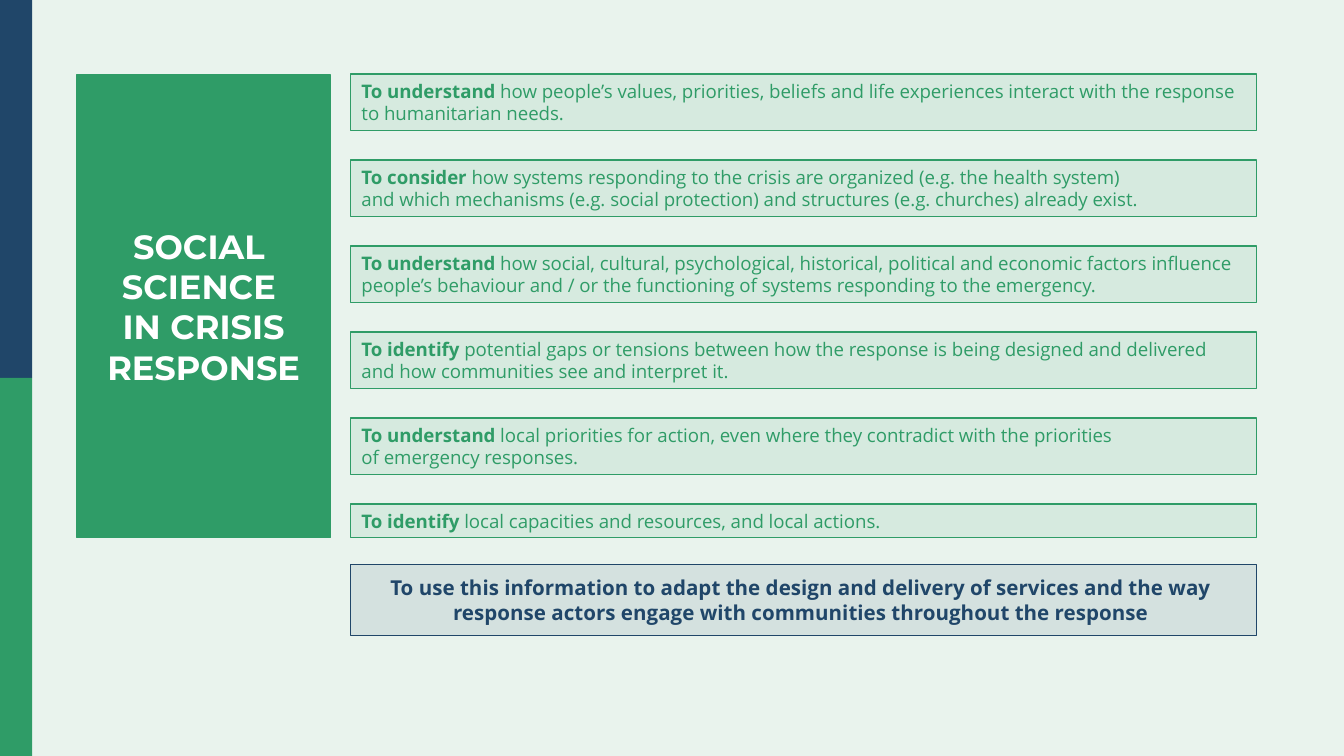
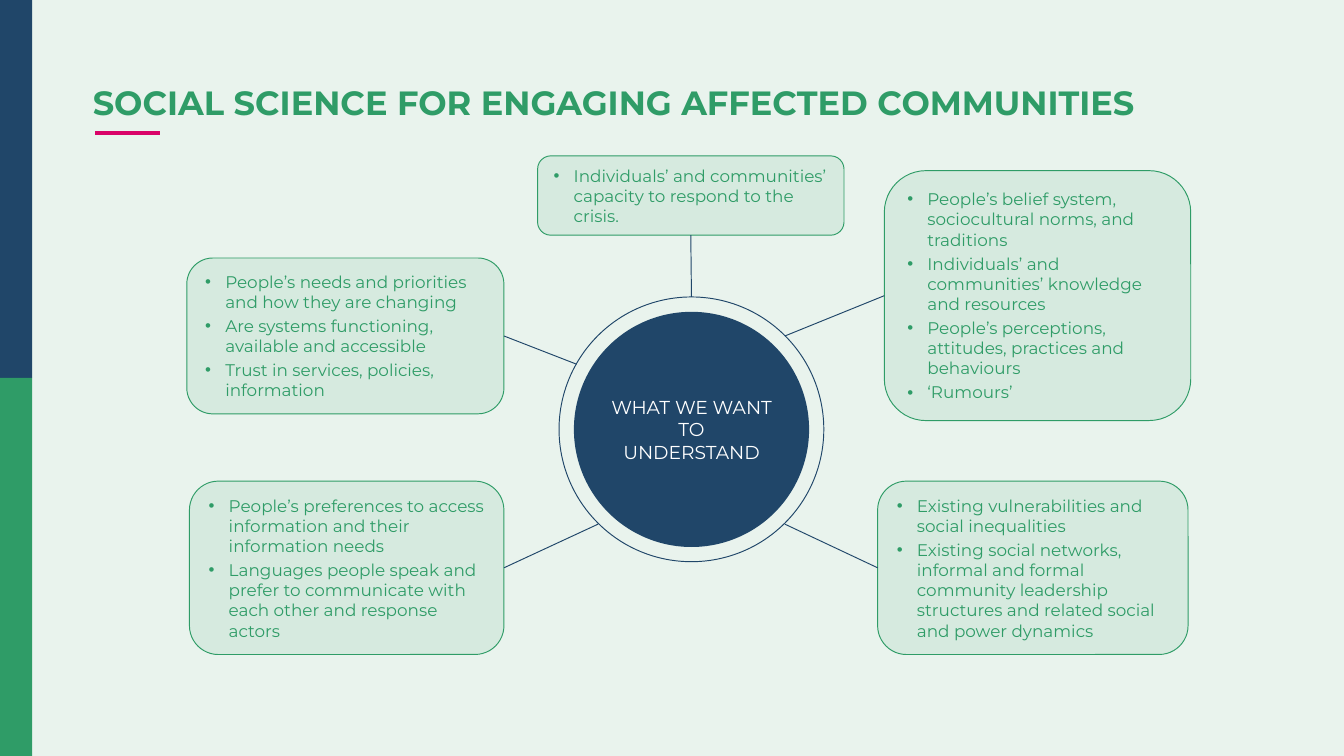
"""Builds two slides on social science in crisis response."""
from typing import NamedTuple, Optional

from lxml import etree
from pptx import Presentation
from pptx import util as u
from pptx.dml.color import RGBColor
from pptx.enum import shapes, text
from pptx.oxml.ns import qn

GREEN, NAVY, PINK, WHITE, PALE = "2F9C67", "204669", "D90368", "FFFFFF", "E9F3ED"
HEAD, BODY = "Montserrat", "Open Sans"
WIDTH, BAND = 10, 0.24
HEIGHT = WIDTH * 9 / 16
RECT, ROUND, OVAL = (shapes.MSO_SHAPE.RECTANGLE, shapes.MSO_SHAPE.ROUNDED_RECTANGLE,
                     shapes.MSO_SHAPE.OVAL)
TOP, LEFT, BOTTOM, RIGHT = range(4)


class Style(NamedTuple):
    font: str
    size: float
    color: str
    bold: bool = False
    centred: bool = False
    bullet: bool = False


class Purpose(NamedTuple):
    lead: str
    rest: str
    second: str = ""
    height: float = 0.42


class Topic(NamedTuple):
    box: tuple[float, float, float, float]
    side: int
    end: Optional[tuple[float, float]]
    items: list[str]
    inset: float = 0.08


PURPOSE = Style(BODY, 10, GREEN)
CONCLUSION = Style(BODY, 11, NAVY, bold=True, centred=True)
PANEL = Style(HEAD, 18, WHITE, bold=True, centred=True)
TITLE = Style(HEAD, 18, GREEN, bold=True)
TOPIC = Style(HEAD, 9, GREEN, bullet=True)
HUB = Style(HEAD, 10, WHITE, centred=True)

PURPOSES = [
    Purpose("To understand ", "how people’s values, priorities, beliefs and life experiences "
            "interact with the response", "to humanitarian needs."),
    Purpose("To consider ", "how systems responding to the crisis are organized (e.g. the health "
            "system) \nand which mechanisms (e.g. social protection) and structures "
            "(e.g. churches) already exist."),
    Purpose("To understand ", "how social, cultural, psychological, historical, political and "
            "economic factors influence people’s behaviour and / or the functioning of systems "
            "responding to the emergency."),
    Purpose("To identify ", "potential gaps or tensions between how the response is being "
            "designed and delivered \nand how communities see and interpret it."),
    Purpose("To understand ", "local priorities for action, even where they contradict with the "
            "priorities \nof emergency responses."),
    Purpose("To identify ", "local capacities and resources, and local actions.", height=0.25),
]

TOPICS = [
    Topic((4, 1.16, 2.28, 0.59), BOTTOM, None,
          ["Individuals’ and communities’ capacity to respond to the crisis."], 0.09),
    Topic((1.39, 1.92, 2.36, 1.16), RIGHT, (4.29, 2.71),
          ["People’s needs and priorities and how they are changing",
           "Are systems functioning, available and accessible",
           "Trust in services, policies, information"]),
    Topic((1.41, 3.58, 2.34, 1.29), RIGHT, (4.45, 3.9),
          ["People’s preferences to access information and their information needs",
           "Languages people speak and prefer to communicate with each other "
           "and response actors"]),
    Topic((6.53, 3.58, 2.31, 1.29), LEFT, (5.84, 3.9),
          ["Existing vulnerabilities and social inequalities",
           "Existing social networks, informal and formal community leadership structures "
           "and related social and power dynamics"]),
    Topic((6.58, 1.27, 2.28, 1.86), LEFT, (5.84, 2.5),
          ["People’s belief system, sociocultural norms, and traditions",
           "Individuals’ and communities’ knowledge and resources",
           "People’s perceptions, attitudes, practices and behaviours",
           "‘Rumours’"]),
]


def rgb(value: str) -> RGBColor:
    return RGBColor.from_string(value)


def add_shape(s, kind, box, fill=None, alpha=100, line=None, width=0.0):
    sp = s.shapes.add_shape(kind, *map(u.Inches, box))
    sp.shadow.inherit = False
    if fill:
        sp.fill.solid()
        sp.fill.fore_color.rgb = rgb(fill)
        if alpha < 100:
            clr = sp._element.spPr.find(qn("a:solidFill"))[0]
            etree.SubElement(clr, qn("a:alpha"), val=str(alpha * 1000))
    else:
        sp.fill.background()
    if line:
        sp.line.color.rgb = rgb(line)
        sp.line.width = u.Pt(width)
    else:
        sp.line.fill.background()
    return sp


def add_line(s, start, end, color: str, width: float):
    cx = s.shapes.add_connector(shapes.MSO_CONNECTOR.STRAIGHT, *map(u.Inches, (*start, *end)))
    cx.line.color.rgb = rgb(color)
    cx.line.width = u.Pt(width)
    etree.SubElement(cx._element.spPr, qn("a:effectLst"))
    return cx


def add_bullet(p) -> None:
    pPr = p._p.get_or_add_pPr()
    pPr.set("marL", str(u.Inches(0.15)))
    pPr.set("indent", str(-u.Inches(0.15)))
    etree.SubElement(pPr, qn("a:buFont"), typeface="Arial")
    etree.SubElement(pPr, qn("a:buChar"), char="•")
    p.space_after = u.Pt(2)


def add_run(p, words: str, style: Style, bold: bool) -> None:
    for i, part in enumerate(words.split("\n")):
        if i:
            p.add_line_break()
        r = p.add_run()
        r.text = part
        r.font.name, r.font.size, r.font.bold = style.font, u.Pt(style.size), bold
        r.font.color.rgb = rgb(style.color)


def write(sp, paragraphs, style: Style, insets, grow=True,
          anchor=text.MSO_ANCHOR.MIDDLE) -> None:
    tf = sp.text_frame
    tf.word_wrap = True
    tf.auto_size = text.MSO_AUTO_SIZE.SHAPE_TO_FIT_TEXT if grow else text.MSO_AUTO_SIZE.NONE
    tf.vertical_anchor = anchor
    tf.margin_left, tf.margin_top, tf.margin_right, tf.margin_bottom = map(u.Inches, insets)
    for i, runs in enumerate(paragraphs):
        p = tf.add_paragraph() if i else tf.paragraphs[0]
        p.alignment = text.PP_ALIGN.CENTER if style.centred else text.PP_ALIGN.LEFT
        if style.bullet:
            add_bullet(p)
        for run in runs:
            words, bold = (run, style.bold) if isinstance(run, str) else run
            add_run(p, words, style, bold)


def add_slide(prs, layout: int):
    s = prs.slides.add_slide(prs.slide_layouts[layout])
    for i, color in enumerate((NAVY, GREEN)):
        add_shape(s, RECT, (0, i * HEIGHT / 2, BAND, HEIGHT / 2), color)
    return s


def add_title(s, words: str) -> None:
    add_line(s, (0.71, 0.99), (1.19, 0.99), PINK, 2.25)
    sp = s.shapes.title
    sp.left, sp.top, sp.width, sp.height = map(u.Inches, (0.69, 0.59, 8.62, 0.37))
    write(sp, [[words]], TITLE, (0, 0.05, 0.1, 0.05), anchor=text.MSO_ANCHOR.TOP)
    sp.text_frame.paragraphs[0].line_spacing = 0.9


def build_purposes(prs) -> None:
    s = add_slide(prs, 6)
    left, width = 2.61, 6.74
    for i, item in enumerate(PURPOSES):
        box = (left, 0.55 + i * 0.64, width, item.height)
        sp = add_shape(s, RECT, box, GREEN, 10, GREEN)
        paragraphs = [[(item.lead, True), item.rest]]
        if item.second:
            paragraphs.append([item.second])
        write(sp, paragraphs, PURPOSE, (0.08, 0.04, 0.04, 0.04))
    sp = add_shape(s, RECT, (left, 4.2, width, 0.53), NAVY, 10, NAVY)
    write(sp, [["To use this information to adapt the design and delivery of services and the way \n"
                "response actors engage with communities throughout the response "]],
          CONCLUSION, (0.08,) * 4)
    sp = add_shape(s, RECT, (0.57, 0.56, 1.89, 3.44), GREEN, line=GREEN)
    write(sp, [["SOCIAL \nSCIENCE \nIN CRISIS RESPONSE"]], PANEL, (0.08,) * 4, grow=False)


def build_topics(prs) -> None:
    s = add_slide(prs, 5)
    add_title(s, "SOCIAL SCIENCE FOR ENGAGING AFFECTED COMMUNITIES")
    cards = []
    for topic in TOPICS:
        sp = add_shape(s, ROUND, topic.box, GREEN, 10, GREEN, 0.5)
        write(sp, [[item] for item in topic.items], TOPIC,
              (topic.inset, 0.04, topic.inset, 0.04))
        cards.append(sp)
    ring = add_shape(s, OVAL, (4.16, 2.21, 1.97, 1.97), line=NAVY, width=0.5)
    hub = add_shape(s, OVAL, (4.27, 2.32, 1.75, 1.75), NAVY)
    write(hub, [["WHAT WE WANT TO UNDERSTAND"]], HUB, (0,) * 4, grow=False)
    for topic, card in zip(TOPICS, cards):
        end = topic.end or (5.14, 2.21)
        cx = add_line(s, end, end, NAVY, 0.5)
        cx.begin_connect(card, topic.side)
        if topic.end is None:
            cx.end_connect(ring, TOP)


def main() -> None:
    prs = Presentation()
    prs.slide_width, prs.slide_height = u.Inches(WIDTH), u.Inches(HEIGHT)
    fill = prs.slide_master.background.fill
    fill.solid()
    fill.fore_color.rgb = rgb(PALE)
    build_purposes(prs)
    build_topics(prs)
    prs.save("out.pptx")


if __name__ == "__main__":
    main()
